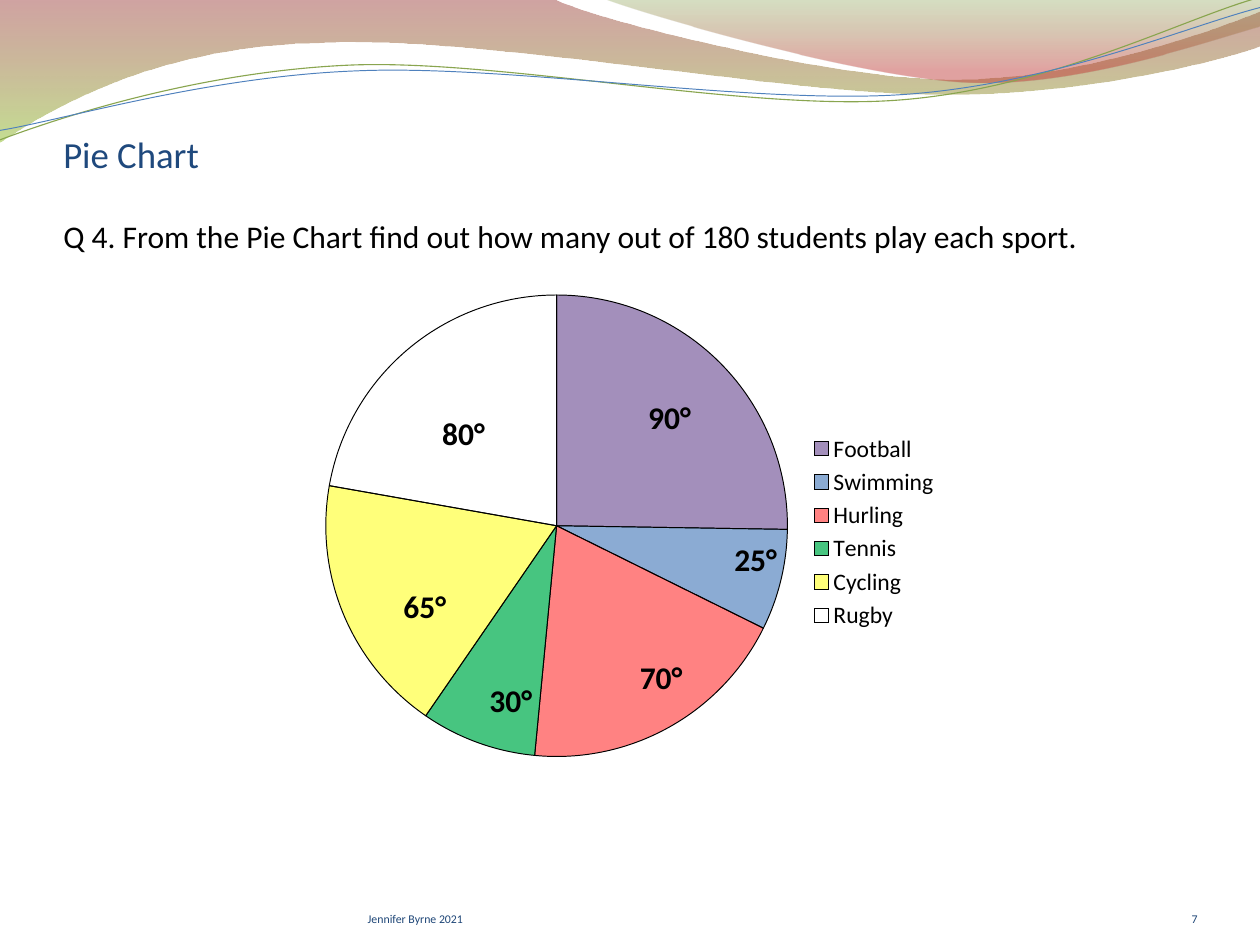
import math
from typing import NamedTuple, Optional

import lxml.etree
import pptx
import pptx.chart.data
import pptx.dml.color
import pptx.enum.chart
import pptx.enum.text
import pptx.oxml
import pptx.oxml.ns
import pptx.util

Inches = pptx.util.Inches
Pt = pptx.util.Pt
Point = tuple[float, float]
Curve = tuple[Point, Point, Point]
Anchor = pptx.enum.text.MSO_ANCHOR
Align = pptx.enum.text.PP_ALIGN
qn = pptx.oxml.ns.qn

FONT = "Calibri"
COLORS = {
    "black": "000000", "title": "1F497D", "footer": "1E4677",
    "wave red": "973330", "wave lime": "95C238",
    "wave green": "769537", "wave crimson": "BE3330",
    "line green": "89A54F", "line blue": "4F81BD",
    "purple": "8064A2", "blue": "4F81BD", "red": "FF0000",
    "green": "00B050", "yellow": "FFFF00",
}


class Stop(NamedTuple):
    position: float
    color: str
    opacity: int


class Wave(NamedTuple):
    """An outline of straight points (pairs) and Bezier curves (triples)."""
    start: Point
    segments: list[Point | Curve]
    stops: Optional[tuple[Stop, Stop]] = None
    line: Optional[tuple[str, float]] = None
    center: Point = (0, 0)
    tilt: float = 0


class Sport(NamedTuple):
    name: str
    percent: int
    degrees: int
    label_at: Point
    color: Optional[str]
    opacity: int = 100


class Label(NamedTuple):
    text: str
    box: tuple[float, float, float, float]
    size: int
    color: str
    top_inset: float = 0
    align: Align = Align.LEFT


WAVES = [
    Wave((0, -0.01), [
        (5.87, -0.01),
        ((6.34, 0.22), (8.85, 0.84), (10.11, 0.84)),
        ((11.37, 0.84), (12.78, 0.34), (13.33, 0.12)),
        (13.35, 0.48),
        ((13.11, 0.58), (11.6, 1.01), (9.94, 1)),
        ((8.29, 1), (5.09, 0.37), (3.43, 0.45)),
        ((1.72, 0.47), (0.61, 1.1), (-0.01, 1.51)),
        (0, -0.01),
    ], stops=(Stop(0, "wave red", 45), Stop(1, "wave lime", 55))),
    Wave((6.39, -0.01), [
        ((6.79, 0.15), (9.09, 0.82), (10.25, 0.87)),
        ((11.41, 0.92), (12.82, 0.42), (13.33, 0.28)),
        (13.33, 0),
        (6.39, -0.01),
    ], stops=(Stop(0, "wave green", 30), Stop(0.8, "wave crimson", 45))),
    Wave((0, 1.48), [
        ((0.64, 1.24), (2.1, 0.76), (3.69, 0.69)),
        ((5.27, 0.62), (7.9, 1.18), (9.5, 1.06)),
        ((11.11, 0.94), (12.51, 0.2), (13.3, -0.02)),
    ], line=("line green", 0.85), center=(6.65, 0.77), tilt=-2.7),
    Wave((0, 1.38), [
        ((0.63, 1.28), (2.18, 0.81), (3.77, 0.75)),
        ((5.37, 0.68), (7.96, 1.11), (9.56, 1)),
        ((11.15, 0.89), (12.55, 0.28), (13.33, 0.08)),
    ], line=("line blue", 0.75), center=(6.67, 0.78), tilt=-2.7),
]
SPORTS = [
    Sport("Football", 25, 90, (6.76, 4.16), "purple", 72),
    Sport("Swimming", 7, 25, (7.67, 5.67), "blue", 66),
    Sport("Hurling", 19, 70, (6.67, 6.91), "red", 49),
    Sport("Tennis", 8, 30, (5.08, 7.16), "green", 72),
    Sport("Cycling", 18, 65, (4.17, 6.16), "yellow", 52),
    Sport("Rugby", 22, 80, (4.58, 4.33), None),
]
QUESTION = Label("Q 4. From the Pie Chart find out how many out of 180 students play each sport.",
                 (0.67, 1.03, 12, 1.67), 24, "black", 0.05)
LABELS = [
    Label("Jennifer Byrne 2021", (3.89, 9.27, 4.89, 0.53), 9, "footer"),
    Label("Pie Chart", (0.67, 1.05, 12, 0.81), 28, "title", 0.05),
    Label("7", (11.56, 9.27, 1.11, 0.53), 9, "footer", align=Align.RIGHT),
]


def rgb(name: str) -> pptx.dml.color.RGBColor:
    return pptx.dml.color.RGBColor.from_string(COLORS[name])


def set_opacity(parent, percents: list[int]) -> None:
    """Give each RGB colour below the element its opacity, in order."""
    for color, percent in zip(parent.iter(qn("a:srgbClr")), percents):
        lxml.etree.SubElement(color, qn("a:alpha")).set("val", str(percent * 1000))


def level_point(point: Point, wave: Wave) -> Point:
    """Place a point as it lies before the wave is tilted about its centre."""
    angle = math.radians(-wave.tilt)
    x, y = point[0] - wave.center[0], point[1] - wave.center[1]
    return (wave.center[0] + x * math.cos(angle) - y * math.sin(angle),
            wave.center[1] + x * math.sin(angle) + y * math.cos(angle))


def bend_segments(shape, segments: list[Point | Curve]) -> None:
    """Join the three line segments of each curve into one Bezier segment."""
    lines = iter(list(shape.element.spPr.iter(qn("a:lnTo"))))
    for segment in segments:
        first = next(lines)
        if len(segment) == 3:
            curve = pptx.oxml.parse_xml(f'<a:cubicBezTo {pptx.oxml.ns.nsdecls("a")}/>')
            first.addprevious(curve)
            for line in (first, next(lines), next(lines)):
                curve.append(line[0])
                line.getparent().remove(line)


def draw_wave(slide, wave: Wave) -> None:
    points = [wave.start]
    for segment in wave.segments:
        points += segment if len(segment) == 3 else [segment]
    vertices = [tuple(map(Inches, level_point(point, wave))) for point in points]
    builder = slide.shapes.build_freeform(*vertices[0])
    builder.add_line_segments(vertices[1:], close=wave.stops is not None)
    shape = builder.convert_to_shape()
    bend_segments(shape, wave.segments)
    shape.rotation = wave.tilt
    shape.shadow.inherit = False
    if wave.stops:
        shape.fill.gradient()
        shape.fill.gradient_angle = 270
        for gradient_stop, stop in zip(shape.fill.gradient_stops, wave.stops):
            gradient_stop.position = stop.position
            gradient_stop.color.rgb = rgb(stop.color)
        set_opacity(shape.element.spPr, [stop.opacity for stop in wave.stops])
    else:
        shape.fill.background()
    if wave.line:
        color, width = wave.line
        shape.line.color.rgb = rgb(color)
        shape.line.width = Pt(width)
    else:
        shape.line.fill.background()


def add_run(paragraph, text: str, size: int, color: str, bold: bool = False) -> None:
    run = paragraph.add_run()
    run.text = text
    run.font.name, run.font.size, run.font.bold = FONT, Pt(size), bold
    run.font.color.rgb = rgb(color)


def draw_label(slide, label: Label) -> None:
    frame = slide.shapes.add_textbox(*map(Inches, label.box)).text_frame
    frame.word_wrap = True
    frame.vertical_anchor = Anchor.BOTTOM
    frame.margin_left = frame.margin_right = frame.margin_bottom = 0
    frame.margin_top = Inches(label.top_inset)
    frame.paragraphs[0].alignment = label.align
    add_run(frame.paragraphs[0], label.text, label.size, label.color)


def draw_angle(slide, sport: Sport) -> None:
    box = (*sport.label_at, 0.66, 0.5)
    frame = slide.shapes.add_textbox(*map(Inches, box)).text_frame
    frame.word_wrap = False
    frame.auto_size = pptx.enum.text.MSO_AUTO_SIZE.SHAPE_TO_FIT_TEXT
    add_run(frame.paragraphs[0], f"{sport.degrees}°", 24, "black", bold=True)


def set_plot_layout(chart, x: float, y: float, width: float, height: float) -> None:
    plot_area = chart.element.chart.plotArea
    for old in plot_area.findall(qn("c:layout")):
        plot_area.remove(old)
    settings = {"layoutTarget": "inner", "xMode": "edge", "yMode": "edge",
                "x": x, "y": y, "w": width, "h": height}
    children = "".join(f'<c:{tag} val="{value}"/>' for tag, value in settings.items())
    plot_area.insert(0, pptx.oxml.parse_xml(
        f'<c:layout {pptx.oxml.ns.nsdecls("c")}><c:manualLayout>{children}</c:manualLayout></c:layout>'))


def draw_pie(slide) -> None:
    data = pptx.chart.data.CategoryChartData()
    data.categories = [sport.name for sport in SPORTS]
    data.add_series("Series 1", [sport.percent for sport in SPORTS])
    box = map(Inches, (3.29, 2.33, 6.75, 6.6))
    chart = slide.shapes.add_chart(pptx.enum.chart.XL_CHART_TYPE.PIE, *box, data).chart
    chart.has_title = False
    chart.font.name, chart.font.size = FONT, Pt(18)
    chart.font.color.rgb = rgb("black")
    chart.has_legend = True
    chart.legend.position = pptx.enum.chart.XL_LEGEND_POSITION.RIGHT
    chart.legend.include_in_layout = False
    chart.plots[0].vary_by_categories = True
    set_plot_layout(chart, 0.02, 0.12, 0.73, 0.74)
    for index, sport in enumerate(SPORTS):
        point_format = chart.plots[0].series[0].points[index].format
        if sport.color:
            point_format.fill.solid()
            point_format.fill.fore_color.rgb = rgb(sport.color)
            set_opacity(chart.element.findall(".//" + qn("c:dPt"))[index], [sport.opacity])
        else:
            point_format.fill.background()
        point_format.line.color.rgb = rgb("black")
        point_format.line.width = Pt(0.75)


def main() -> None:
    presentation = pptx.Presentation()
    presentation.slide_width, presentation.slide_height = Inches(13.33), Inches(10)
    slide = presentation.slides.add_slide(presentation.slide_layouts[6])
    for wave in WAVES:
        draw_wave(slide, wave)
    draw_label(slide, QUESTION)
    draw_pie(slide)
    for sport in SPORTS:
        draw_angle(slide, sport)
    for label in LABELS:
        draw_label(slide, label)
    presentation.save("out.pptx")


if __name__ == "__main__":
    main()
